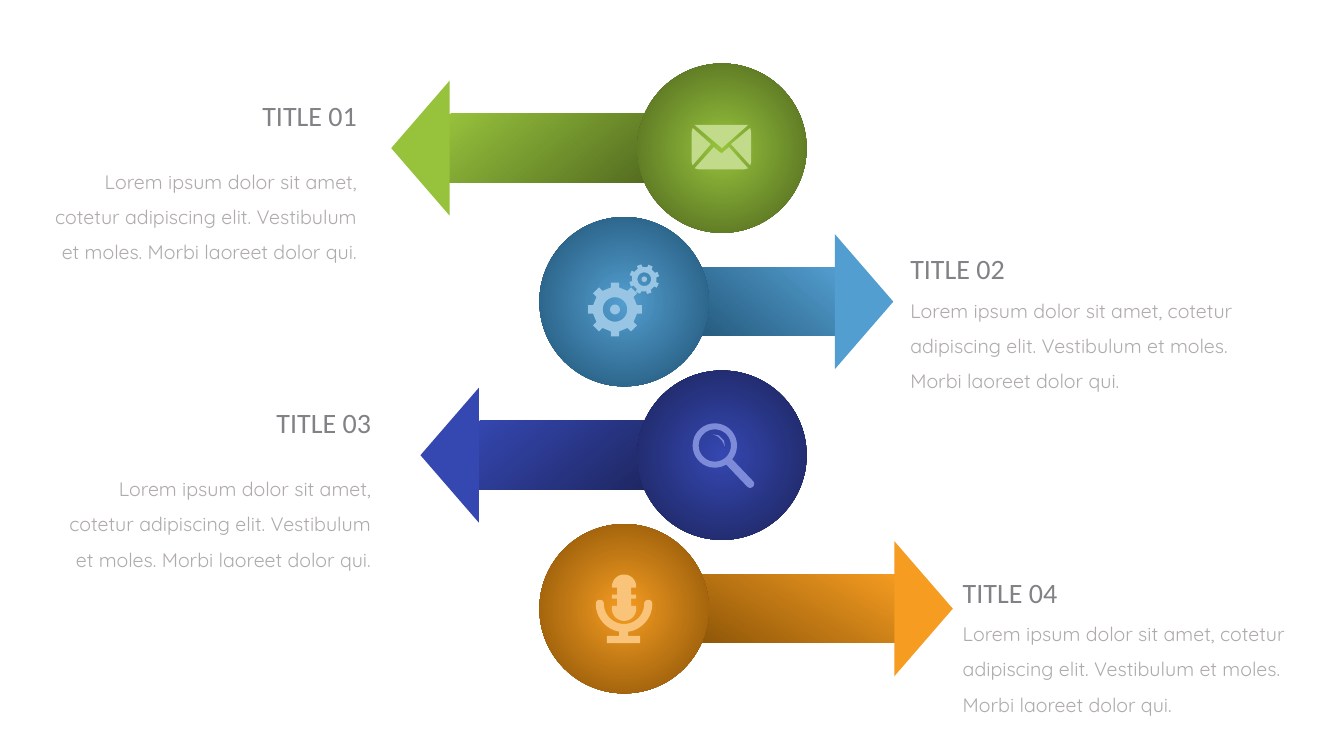
import math

import pptx
import pptx.dml.color
import pptx.enum.shapes
import pptx.enum.text
import pptx.oxml
import pptx.oxml.ns
import pptx.util
from pptx.util import Inches

SHAPE = pptx.enum.shapes.MSO_SHAPE
ALIGN = pptx.enum.text.PP_ALIGN
BODY = ("Lorem ipsum dolor sit amet, cotetur adipiscing elit. "
        "Vestibulum et moles. Morbi laoreet dolor qui.")
FIRST_ROW, ROW_PITCH = 1.47, 1.523
DISC = 1.68

# title, side, arrow tip x, bright, dark, bar angle, text left, top, width, body height
ROWS = [
    ("TITLE 01", "left", 3.88, "97C33C", "4C621E", 50, 0.38, 0.8, 3.26, 1.76),
    ("TITLE 02", "right", 8.86, "539ED0", "1F5172", 130, 8.93, 2.32, 3.75, 1.28),
    ("TITLE 03", "left", 4.17, "3547B1", "1B2358", 50, 0.52, 3.85, 3.26, 1.76),
    ("TITLE 04", "right", 9.45, "F59C21", "855006", 120, 9.45, 5.53, 3.61, 1.28),
]


def rgb(value):
    return pptx.dml.color.RGBColor.from_string(value)


def finish(sp, color=None):
    sp.shadow.inherit = False
    sp.line.fill.background()
    if color:
        sp.fill.solid()
        sp.fill.fore_color.rgb = rgb(color)


def add_preset(s, kind, x, y, w, h, color=None):
    sp = s.shapes.add_shape(kind, Inches(x), Inches(y), Inches(w), Inches(h))
    finish(sp, color)
    return sp


def add_outline(s, color, *contours):
    """Closed contours in one freeform; inner contours become holes."""
    points = [[(Inches(x), Inches(y)) for x, y in c] for c in contours]
    builder = s.shapes.build_freeform(*points[0][0])
    for i, contour in enumerate(points):
        if i:
            builder.move_to(*contour[0])
        builder.add_line_segments(contour[1:], close=True)
    finish(builder.convert_to_shape(), color)


def set_gradient(sp, bright, dark, angle=None):
    """Linear at a clockwise angle, or radial when no angle is given."""
    sp.fill.gradient()
    for stop, color, position in zip(sp.fill.gradient_stops, (bright, dark), (0, 1)):
        stop.color.rgb = rgb(color)
        stop.position = position
    if angle is not None:
        sp.fill.gradient_angle = 360 - angle
        return
    grad = sp._element.spPr.find(pptx.oxml.ns.qn("a:gradFill"))
    grad.replace(grad.find(pptx.oxml.ns.qn("a:lin")), pptx.oxml.parse_xml(
        f'<a:path {pptx.oxml.ns.nsdecls("a")} path="circle">'
        '<a:fillToRect l="50000" t="50000" r="50000" b="50000"/></a:path>'))


def add_text(s, text, x, y, w, h, size, font, color, align):
    tf = s.shapes.add_textbox(Inches(x), Inches(y), Inches(w), Inches(h)).text_frame
    tf.word_wrap = True
    tf.vertical_anchor = pptx.enum.text.MSO_ANCHOR.MIDDLE
    p = tf.paragraphs[0]
    p.alignment = align
    p.line_spacing = 1.5
    r = p.add_run()
    r.text = text
    r.font.size = pptx.util.Pt(size)
    r.font.name = font
    r.font.color.rgb = rgb(color)


def arc(cx, cy, radius, start=0, end=360):
    steps = 36
    angles = [math.radians(start + (end - start) * i / steps) for i in range(steps + 1)]
    return [(cx + radius * math.cos(a), cy + radius * math.sin(a)) for a in angles]


def gear(cx, cy, radius, turn=0):
    """Eight-toothed wheel with a ring-shaped hole around its hub."""
    rim = []
    for tooth in range(8):
        middle = turn + 45 * tooth
        for offset, share in ((-11, 0.82), (-9, 1), (9, 1), (11, 0.82)):
            a = math.radians(middle + offset)
            rim.append((cx + share * radius * math.cos(a), cy + share * radius * math.sin(a)))
    return [rim, arc(cx, cy, radius * 0.45), arc(cx, cy, radius * 0.18)]


# Icons
def add_envelope(s, color):
    add_outline(
        s, color,
        [(6.89, 1.24), (7.42, 1.24), (7.16, 1.47)],
        [(6.87, 1.27), (7.05, 1.43), (6.87, 1.64), (6.86, 1.61), (6.86, 1.31)],
        [(7.44, 1.27), (7.25, 1.43), (7.44, 1.64), (7.45, 1.61), (7.45, 1.31)],
        [(7.08, 1.46), (7.14, 1.51), (7.16, 1.52), (7.17, 1.51), (7.23, 1.46),
         (7.42, 1.67), (7.38, 1.68), (6.93, 1.68), (6.89, 1.67)])


def add_gears(s, color):
    add_outline(s, color, *gear(6.1, 3.07, 0.27), *gear(6.39, 2.77, 0.15, 25))


def add_magnifier(s, color):
    add_outline(s, color, arc(7.09, 4.42, 0.22), arc(7.09, 4.42, 0.16))
    add_outline(s, color, arc(7.44, 4.8, 0.04, -43, 137) + arc(7.23, 4.58, 0.04, 137, 317))
    add_outline(s, color, [(7.07, 4.31), (7.13, 4.32), (7.18, 4.37), (7.19, 4.43),
                           (7.16, 4.37), (7.12, 4.33)])


def add_microphone(s, color):
    cx = 6.19
    add_outline(s, color, arc(cx + 0.24, 5.99, 0.04, 180, 360) + arc(cx, 5.99, 0.28, 0, 180)
                + arc(cx - 0.24, 5.99, 0.04, 180, 360) + arc(cx, 5.99, 0.2, 180, 0))
    notches = [(0.12, 5.83), (0.07, 5.83), (0.07, 5.9), (0.12, 5.9),
               (0.12, 5.94), (0.07, 5.94), (0.07, 6.01), (0.12, 6.01)]
    add_outline(s, color, arc(cx, 5.82, 0.12, 180, 360) + [(cx + d, y) for d, y in notches]
                + arc(cx, 6.04, 0.12, 0, 180) + [(cx - d, y) for d, y in reversed(notches)])
    add_preset(s, SHAPE.RECTANGLE, 6.14, 6.24, 0.09, 0.09, color)
    add_preset(s, SHAPE.RECTANGLE, 6.02, 6.31, 0.33, 0.07, color)


def add_arrow(s, cy, side, tip, bright, dark, angle):
    if side == "left":
        base, bar_left, bar_right, disc_left = tip + 0.58, tip + 0.52, 6.74, 6.32
    else:
        base, bar_left, bar_right, disc_left = tip - 0.58, 6.62, tip - 0.52, 5.35
    bar = add_preset(s, SHAPE.RECTANGLE, bar_left, cy - 0.34, bar_right - bar_left, 0.68)
    set_gradient(bar, bright, dark, angle)
    add_outline(s, bright, [(tip, cy), (base, cy + 0.67), (base, cy - 0.67)])
    disc = add_preset(s, SHAPE.OVAL, disc_left, cy - DISC / 2, DISC, DISC)
    set_gradient(disc, bright, dark)


def main():
    prs = pptx.Presentation()
    prs.slide_width, prs.slide_height = Inches(13.33), Inches(7.5)
    s = prs.slides.add_slide(prs.slide_layouts[6])

    # Arrows with their captions
    for i, (title, side, tip, bright, dark, angle, x, y, w, h) in enumerate(ROWS):
        add_arrow(s, FIRST_ROW + i * ROW_PITCH, side, tip, bright, dark, angle)
        align = ALIGN.RIGHT if side == "left" else ALIGN.LEFT
        add_text(s, BODY, x, y + 0.41, w, h,
                 size=14, font="Quicksand", color="AFABAB", align=align)
        add_text(s, title, x, y, w, 0.52,
                 size=20, font="Calibri", color="818285", align=align)

    # Icons on the discs
    add_envelope(s, "C1DB8A")
    add_gears(s, "98C5E3")
    add_magnifier(s, "7E8BD8")
    add_microphone(s, "F9C47A")

    prs.save("out.pptx")


if __name__ == "__main__":
    main()
